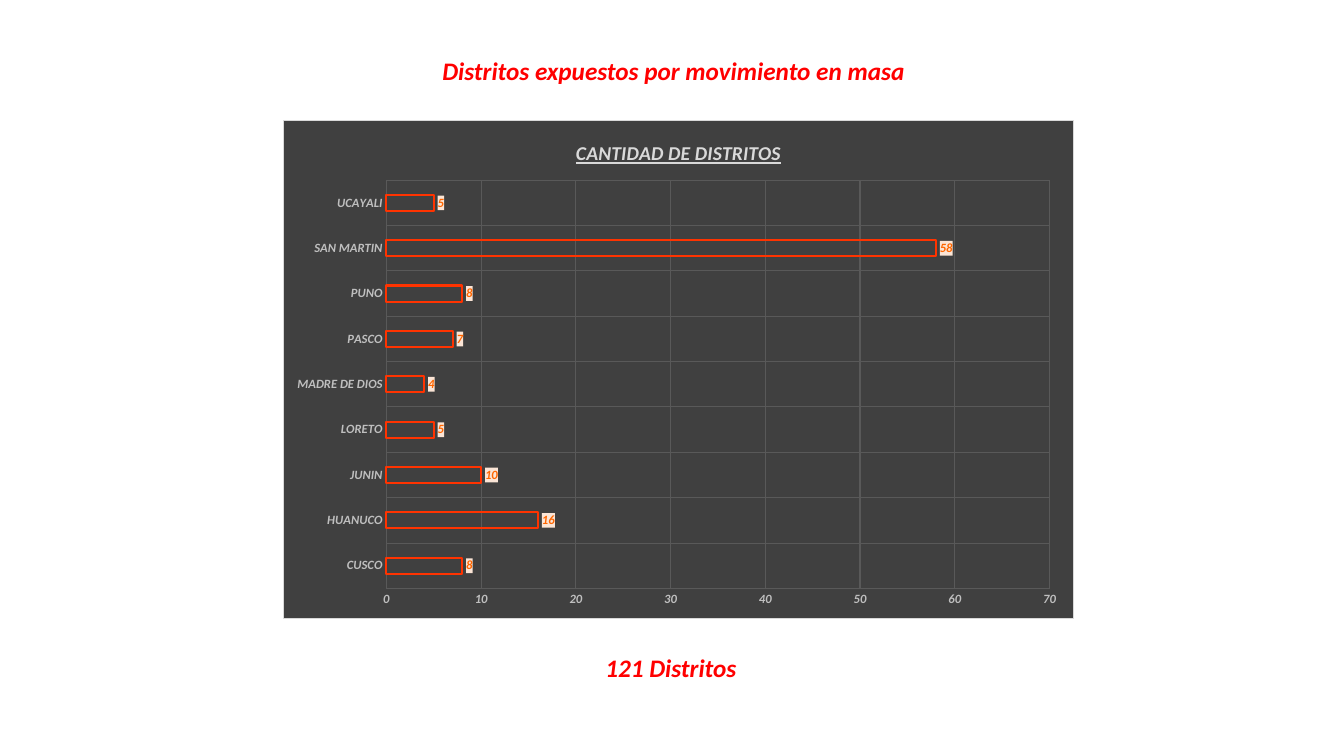
import dataclasses

import lxml.etree
import pptx
import pptx.chart.data
import pptx.dml.color
import pptx.enum.chart
import pptx.enum.text
import pptx.oxml
import pptx.oxml.ns
import pptx.util

Inches = pptx.util.Inches
Pt = pptx.util.Pt
RGBColor = pptx.dml.color.RGBColor

RED = RGBColor(0xFF, 0x00, 0x00)
BAR_RED = RGBColor(0xFF, 0x33, 0x00)
LABEL_ORANGE = RGBColor(0xFF, 0x66, 0x00)
LABEL_PEACH = RGBColor(0xFB, 0xE5, 0xD6)
PANEL_GRAY = RGBColor(0x40, 0x40, 0x40)
GRID_GRAY = RGBColor(0x59, 0x59, 0x59)
AXIS_GRAY = RGBColor(0xBF, 0xBF, 0xBF)
TITLE_GRAY = RGBColor(0xD9, 0xD9, 0xD9)
BLACK = RGBColor(0x00, 0x00, 0x00)
FONT_NAME = "Calibri"

DISTRICTS = {
    "CUSCO": 8,
    "HUANUCO": 16,
    "JUNIN": 10,
    "LORETO": 5,
    "MADRE DE DIOS": 4,
    "PASCO": 7,
    "PUNO": 8,
    "SAN MARTIN": 58,
    "UCAYALI": 5,
}
PLOT_LAYOUT = {"x": 0.13, "y": 0.12, "w": 0.84, "h": 0.82}


@dataclasses.dataclass
class Caption:
    text: str
    left: float
    top: float
    width: float
    height: float
    wrap: bool


HEADING = Caption("Distritos expuestos por movimiento en masa", 4.26, 0.5, 4.84, 0.4, False)
TOTAL = Caption("121 Distritos", 5.82, 6.42, 1.67, 0.4, True)


def style_font(font: pptx.text.text.Font, size: float, color: RGBColor) -> None:
    font.name = FONT_NAME
    font.size = Pt(size)
    font.bold = True
    font.italic = True
    font.color.rgb = color


def fill_caption(box: pptx.shapes.base.BaseShape, caption: Caption) -> None:
    box.left, box.top = Inches(caption.left), Inches(caption.top)
    box.width, box.height = Inches(caption.width), Inches(caption.height)
    frame = box.text_frame
    frame.text = caption.text
    frame.word_wrap = caption.wrap
    frame.auto_size = pptx.enum.text.MSO_AUTO_SIZE.SHAPE_TO_FIT_TEXT
    frame.vertical_anchor = pptx.enum.text.MSO_ANCHOR.TOP
    para = frame.paragraphs[0]
    para.alignment = pptx.enum.text.PP_ALIGN.CENTER
    style_font(para.font, 18, RED)


def shape_properties(fill: RGBColor, border: str = "") -> lxml.etree.ElementBase:
    namespaces = pptx.oxml.ns.nsdecls("c", "a")
    return pptx.oxml.parse_xml(
        f'<c:spPr {namespaces}><a:solidFill><a:srgbClr val="{fill}"/></a:solidFill>{border}</c:spPr>'
    )


def style_axis(axis: pptx.chart.axis._BaseAxis) -> None:
    axis.major_tick_mark = pptx.enum.chart.XL_TICK_MARK.NONE
    axis.minor_tick_mark = pptx.enum.chart.XL_TICK_MARK.NONE
    axis.format.line.fill.background()
    axis.has_major_gridlines = True
    grid = axis.major_gridlines.format.line
    grid.color.rgb = GRID_GRAY
    grid.width = Pt(0.75)
    style_font(axis.tick_labels.font, 9, AXIS_GRAY)


def place_plot(chart: pptx.chart.chart.Chart) -> None:
    tag = pptx.oxml.ns.qn
    plot_area = chart.element.find(".//" + tag("c:plotArea"))
    for layout in plot_area.findall(tag("c:layout")):
        plot_area.remove(layout)
    layout = lxml.etree.Element(tag("c:layout"))
    manual = lxml.etree.SubElement(layout, tag("c:manualLayout"))
    settings = {"layoutTarget": "inner", "xMode": "edge", "yMode": "edge", **PLOT_LAYOUT}
    for name, value in settings.items():
        lxml.etree.SubElement(manual, tag(f"c:{name}"), val=str(value))
    plot_area.insert(0, layout)


def add_district_chart(page: pptx.slide.Slide) -> None:
    data = pptx.chart.data.CategoryChartData(number_format="#,##0")
    data.categories = DISTRICTS.keys()
    data.add_series("Series 1", DISTRICTS.values())
    chart = page.shapes.add_chart(
        pptx.enum.chart.XL_CHART_TYPE.BAR_CLUSTERED,
        Inches(2.81), Inches(1.19), Inches(7.84), Inches(4.95), data,
    ).chart
    chart.has_legend = False
    chart.font.name = FONT_NAME
    chart.font.size = Pt(10)
    chart.font.color.rgb = BLACK

    chart.has_title = True
    chart.chart_title.include_in_layout = False
    frame = chart.chart_title.text_frame
    frame.text = "CANTIDAD DE DISTRITOS"
    title_font = frame.paragraphs[0].font
    style_font(title_font, 14, TITLE_GRAY)
    title_font.underline = True

    for axis in (chart.category_axis, chart.value_axis):
        style_axis(axis)
    chart.value_axis.minimum_scale = 0
    chart.value_axis.maximum_scale = 70
    chart.value_axis.major_unit = 10

    plot = chart.plots[0]
    plot.gap_width = 182
    plot.overlap = -50
    plot.vary_by_categories = False
    bars = plot.series[0]
    bars.format.fill.background()
    bars.format.line.color.rgb = BAR_RED
    bars.format.line.width = Pt(1.5)

    labels = bars.data_labels
    labels.show_value = True
    labels.number_format = "#,##0"
    labels.number_format_is_linked = False
    labels.position = pptx.enum.chart.XL_LABEL_POSITION.OUTSIDE_END
    style_font(labels.font, 9, LABEL_ORANGE)
    label_text = chart.element.find(".//" + pptx.oxml.ns.qn("c:dLbls")).find(pptx.oxml.ns.qn("c:txPr"))
    label_text.addprevious(shape_properties(LABEL_PEACH))

    border = (
        f'<a:ln w="{Pt(0.75)}"><a:solidFill><a:srgbClr val="{TITLE_GRAY}"/></a:solidFill></a:ln>'
    )
    chart.element.find(pptx.oxml.ns.qn("c:chart")).addnext(shape_properties(PANEL_GRAY, border))
    place_plot(chart)


def main() -> None:
    deck = pptx.Presentation()
    deck.slide_width = Inches(13.33)
    deck.slide_height = Inches(7.5)
    page = deck.slides.add_slide(deck.slide_layouts[5])
    fill_caption(page.shapes.title, HEADING)
    total_box = page.shapes.add_textbox(0, 0, 0, 0)
    fill_caption(total_box, TOTAL)
    add_district_chart(page)
    deck.save("out.pptx")


if __name__ == "__main__":
    main()
